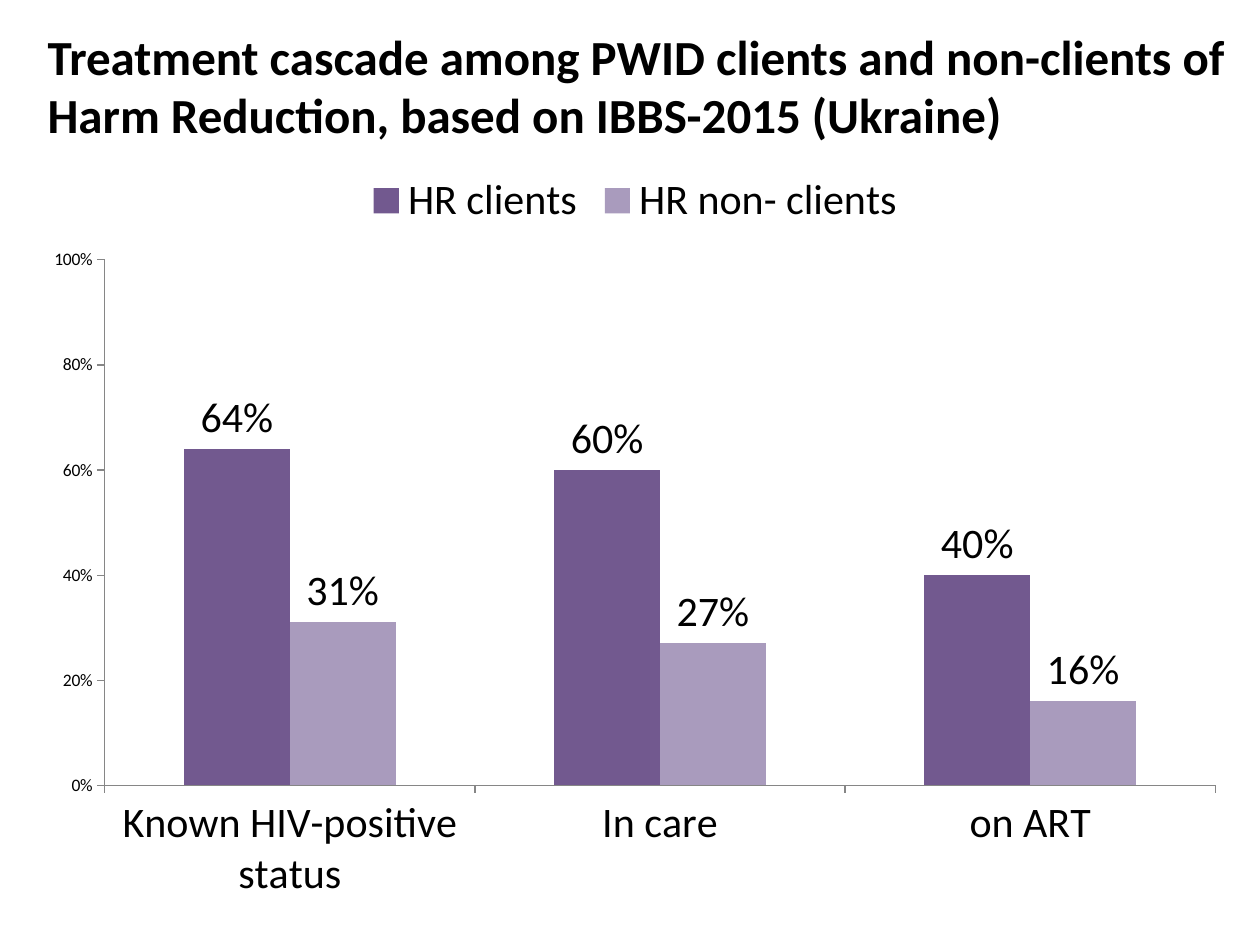
import pptx
import pptx.chart.data
import pptx.dml.color
import pptx.enum.chart
import pptx.enum.text
import pptx.oxml
import pptx.oxml.ns
import pptx.util

Pt = pptx.util.Pt
TITLE = ("Treatment cascade among PWID clients and non-clients of Harm Reduction, "
         "based on IBBS-2015 (Ukraine)")
STAGES = ["Known HIV-positive status", "In care", "on ART"]
SERIES = [
    ("HR clients", (0.64, 0.60, 0.40), "72598F"),
    ("HR non- clients", (0.31, 0.27, 0.16), "A99BBD"),
]
TITLE_BOX = (20, 15, 687, 67)
CHART_BOX = (17, 90, 692, 433.5)
PLOT = {"x": 0.062, "y": 0.135, "w": 0.917, "h": 0.693}
AXIS_COLOR = "868686"


def rgb(value):
    """Return the colour for a hex string."""
    return pptx.dml.color.RGBColor.from_string(value)


def set_font(font, size, bold=False, color="000000"):
    """Format a font."""
    font.name, font.size, font.bold = "Calibri", Pt(size), bold
    font.color.rgb = rgb(color)


def write(tf, text, size, bold=False, before=0):
    """Put one formatted paragraph in a text frame."""
    p = tf.paragraphs[0]
    p.alignment = pptx.enum.text.PP_ALIGN.LEFT
    p.space_before = Pt(before)
    r = p.add_run()
    r.text = text
    set_font(r.font, size, bold)


def place_plot(chart):
    """Fix the inner plot area as fractions of the chart."""
    area = chart._chartSpace.chart.plotArea
    for old in area.findall(pptx.oxml.ns.qn("c:layout")):
        area.remove(old)
    modes = '<c:xMode val="edge"/><c:yMode val="edge"/>'
    sizes = "".join(f'<c:{key} val="{value}"/>' for key, value in PLOT.items())
    area.insert(0, pptx.oxml.parse_xml(
        f'<c:layout {pptx.oxml.ns.nsdecls("c")}><c:manualLayout>'
        f'<c:layoutTarget val="inner"/>{modes}{sizes}</c:manualLayout></c:layout>'))


def add_cascade(slide):
    """Add the clustered column chart."""
    data = pptx.chart.data.CategoryChartData(number_format="0%")
    data.categories = STAGES
    for name, values, _ in SERIES:
        data.add_series(name, values)
    kind = pptx.enum.chart.XL_CHART_TYPE.COLUMN_CLUSTERED
    chart = slide.shapes.add_chart(kind, *map(Pt, CHART_BOX), data).chart
    set_font(chart.font, 10)
    chart.has_title = False
    chart.has_legend = True
    chart.legend.position = pptx.enum.chart.XL_LEGEND_POSITION.TOP
    chart.legend.include_in_layout = False
    set_font(chart.legend.font, 24)

    plot = chart.plots[0]
    plot.gap_width, plot.overlap, plot.vary_by_categories = 150, 0, False
    for series, (_, _, color) in zip(plot.series, SERIES):
        series.format.fill.solid()
        series.format.fill.fore_color.rgb = rgb(color)
        labels = series.data_labels
        labels.show_value = True
        labels.number_format, labels.number_format_is_linked = "0%", False
        labels.position = pptx.enum.chart.XL_LABEL_POSITION.OUTSIDE_END
        set_font(labels.font, 24)

    for axis, size in ((chart.category_axis, 24), (chart.value_axis, 10)):
        axis.has_major_gridlines = False
        axis.major_tick_mark = pptx.enum.chart.XL_TICK_MARK.OUTSIDE
        axis.format.line.color.rgb = rgb(AXIS_COLOR)
        axis.format.line.width = Pt(0.75)
        set_font(axis.tick_labels.font, size)
    scale = chart.value_axis
    scale.minimum_scale, scale.maximum_scale, scale.major_unit = 0, 1, 0.2
    scale.tick_labels.number_format = "0%"
    scale.tick_labels.number_format_is_linked = False
    place_plot(chart)


def main():
    """Build the slide."""
    prs = pptx.Presentation()
    prs.slide_width, prs.slide_height = Pt(720), Pt(540)
    slide = prs.slides.add_slide(prs.slide_layouts[5])
    title = slide.shapes.title
    title.left, title.top, title.width, title.height = map(Pt, TITLE_BOX)
    tf = title.text_frame
    tf.word_wrap = True
    tf.auto_size = pptx.enum.text.MSO_AUTO_SIZE.NONE
    tf.vertical_anchor = pptx.enum.text.MSO_ANCHOR.MIDDLE
    write(tf, TITLE, 28, bold=True, before=10)
    add_cascade(slide)
    prs.save("out.pptx")


if __name__ == "__main__":
    main()
